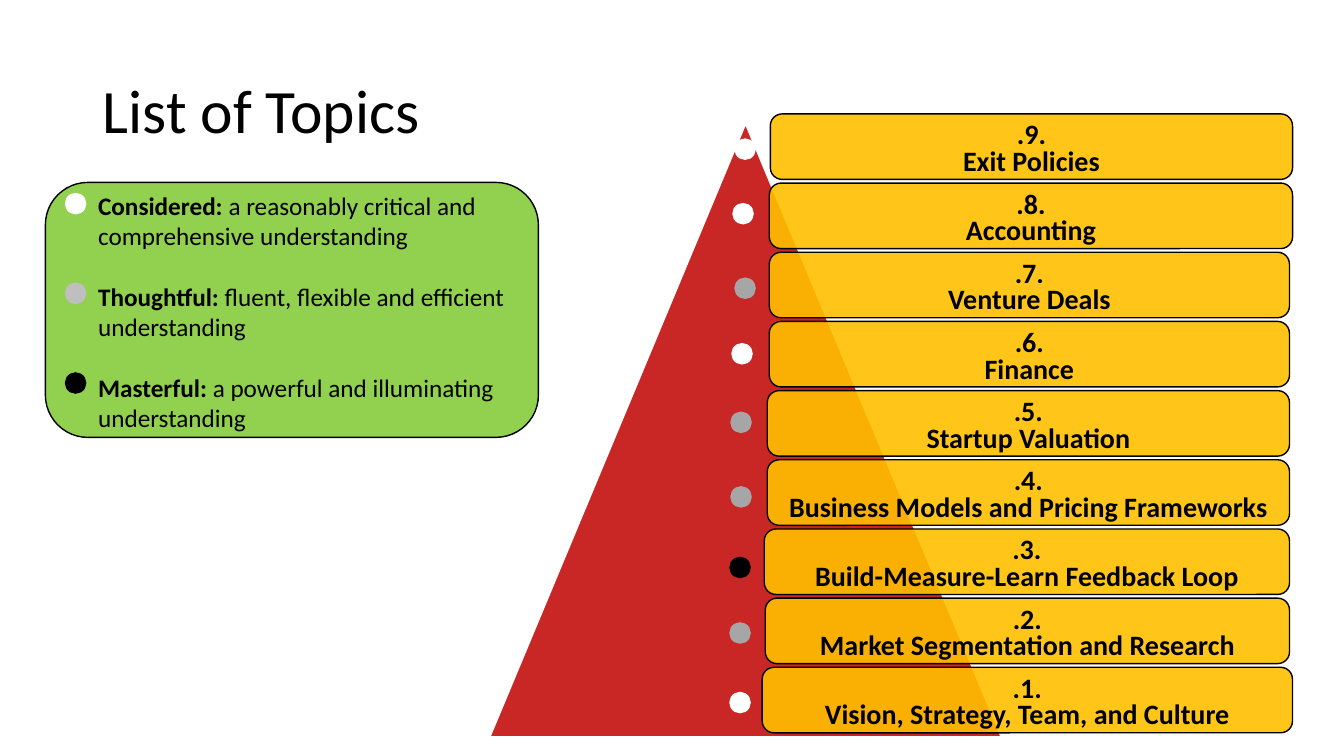
from pptx import Presentation
from pptx.dml.color import RGBColor
from pptx.enum.shapes import MSO_SHAPE
from pptx.enum.text import MSO_ANCHOR, PP_ALIGN
from pptx.oxml.ns import qn
from pptx.util import Inches, Pt
from lxml.etree import SubElement

FONT = "Calibri"
BLACK, WHITE, GRAY, LIGHT_GRAY = "000000", "FFFFFF", "A6A6A6", "BFBFBF"
GREEN, RED, AMBER = "92D050", "C00000", "FFC000"
DOT = 0.2
BAR_TOP, BAR_BOTTOM, BAR_HEIGHT = 1.13, 6.62, 0.65

TOPICS = [
    ("Exit Policies", 7.64, 12.82, 7.29, 1.38, WHITE),
    ("Accounting", 7.63, 12.82, 7.27, 2.02, WHITE),
    ("Venture Deals", 7.63, 12.79, 7.29, 2.76, GRAY),
    ("Finance", 7.63, 12.79, 7.26, 3.41, WHITE),
    ("Startup Valuation", 7.61, 12.79, 7.25, 4.09, GRAY),
    ("Business Models and Pricing Frameworks", 7.61, 12.79, 7.25, 4.83, GRAY),
    ("Build-Measure-Learn Feedback Loop", 7.58, 12.79, 7.24, 5.53, BLACK),
    ("Market Segmentation and Research", 7.59, 12.79, 7.24, 6.18, GRAY),
    ("Vision, Strategy, Team, and Culture", 7.56, 12.82, 7.24, 6.87, WHITE),
]

LEVELS = [
    ("Considered:", " a reasonably critical and comprehensive understanding", 1.92, WHITE),
    ("Thoughtful:", " fluent, flexible and efficient understanding", 2.81, LIGHT_GRAY),
    ("Masterful:", " a powerful and illuminating understanding", 3.7, BLACK),
]


def rgb(value):
    return RGBColor.from_string(value)


class TopicSlide:
    def __init__(self, slide):
        self.slide = slide

    def shape(self, kind, x, y, w, h, fill, line, opacity=100):
        sp = self.slide.shapes.add_shape(kind, Inches(x), Inches(y), Inches(w), Inches(h))
        sp.shadow.inherit = False
        sp.fill.solid()
        sp.fill.fore_color.rgb = rgb(fill)
        sp.line.color.rgb = rgb(line)
        sp.line.width = Pt(1)
        if opacity < 100:
            color = sp._element.spPr.find(qn("a:solidFill"))[0]
            SubElement(color, qn("a:alpha")).set("val", str(opacity * 1000))
        return sp

    def frame(self, sp, left, top, right, bottom):
        tf = sp.text_frame
        tf.word_wrap = True
        tf.vertical_anchor = MSO_ANCHOR.MIDDLE
        tf.margin_left, tf.margin_top = Inches(left), Inches(top)
        tf.margin_right, tf.margin_bottom = Inches(right), Inches(bottom)
        return tf

    def style(self, r, size, bold=False):
        r.font.name = FONT
        r.font.size = Pt(size)
        r.font.bold = bold
        r.font.color.rgb = rgb(BLACK)

    def title(self, text):
        sp = self.slide.shapes.add_textbox(Inches(0.92), Inches(0.4), Inches(11.5), Inches(1.45))
        tf = self.frame(sp, 0.1, 0.05, 0.1, 0.05)
        tf.text = text
        p = tf.paragraphs[0]
        p.line_spacing = 0.9
        self.style(p.runs[0], 44)

    def dot(self, x, y, color):
        self.shape(MSO_SHAPE.OVAL, x, y, DOT, DOT, color, color)

    def legend(self, levels):
        sp = self.shape(MSO_SHAPE.ROUNDED_RECTANGLE, 0.45, 1.81, 4.89, 2.53, GREEN, BLACK)
        tf = self.frame(sp, 0.4, 0.03, 0, 0)
        for i, (name, meaning, y, color) in enumerate(levels):
            p = tf.add_paragraph() if i else tf.paragraphs[0]
            p.alignment = PP_ALIGN.LEFT
            p.space_before = Pt(22 if i else 0)
            for text, bold in ((name, True), (meaning, False)):
                r = p.add_run()
                r.text = text
                self.style(r, 18, bold)
            self.dot(0.65, y, color)

    def pyramid(self):
        self.shape(MSO_SHAPE.ISOSCELES_TRIANGLE, 4.86, 1.23, 5.07, 6.08, RED, WHITE, 85)

    def bar(self, number, topic, left, right, y):
        sp = self.shape(MSO_SHAPE.ROUNDED_RECTANGLE, left, y, right - left, BAR_HEIGHT,
                        AMBER, BLACK, 90)
        sp.adjustments[0] = 0.18
        tf = self.frame(sp, 0.07, 0.25, 0.07, 0.12)
        tf.text = f".{number}.\n{topic}"
        for p in tf.paragraphs:
            p.alignment = PP_ALIGN.CENTER
            p.line_spacing = 0.5
            p.space_after = Pt(7)
            self.style(p.runs[0], 20, True)


def main():
    prs = Presentation()
    prs.slide_width, prs.slide_height = Inches(13.33), Inches(7.5)
    s = TopicSlide(prs.slides.add_slide(prs.slide_layouts[6]))
    s.title("List of Topics")
    s.legend(LEVELS)
    s.pyramid()
    step = (BAR_BOTTOM - BAR_TOP) / (len(TOPICS) - 1)
    for i, (topic, left, right, dot_x, dot_y, color) in enumerate(TOPICS):
        s.bar(len(TOPICS) - i, topic, left, right, BAR_TOP + i * step)
        s.dot(dot_x, dot_y, color)
    prs.save("out.pptx")


if __name__ == "__main__":
    main()
